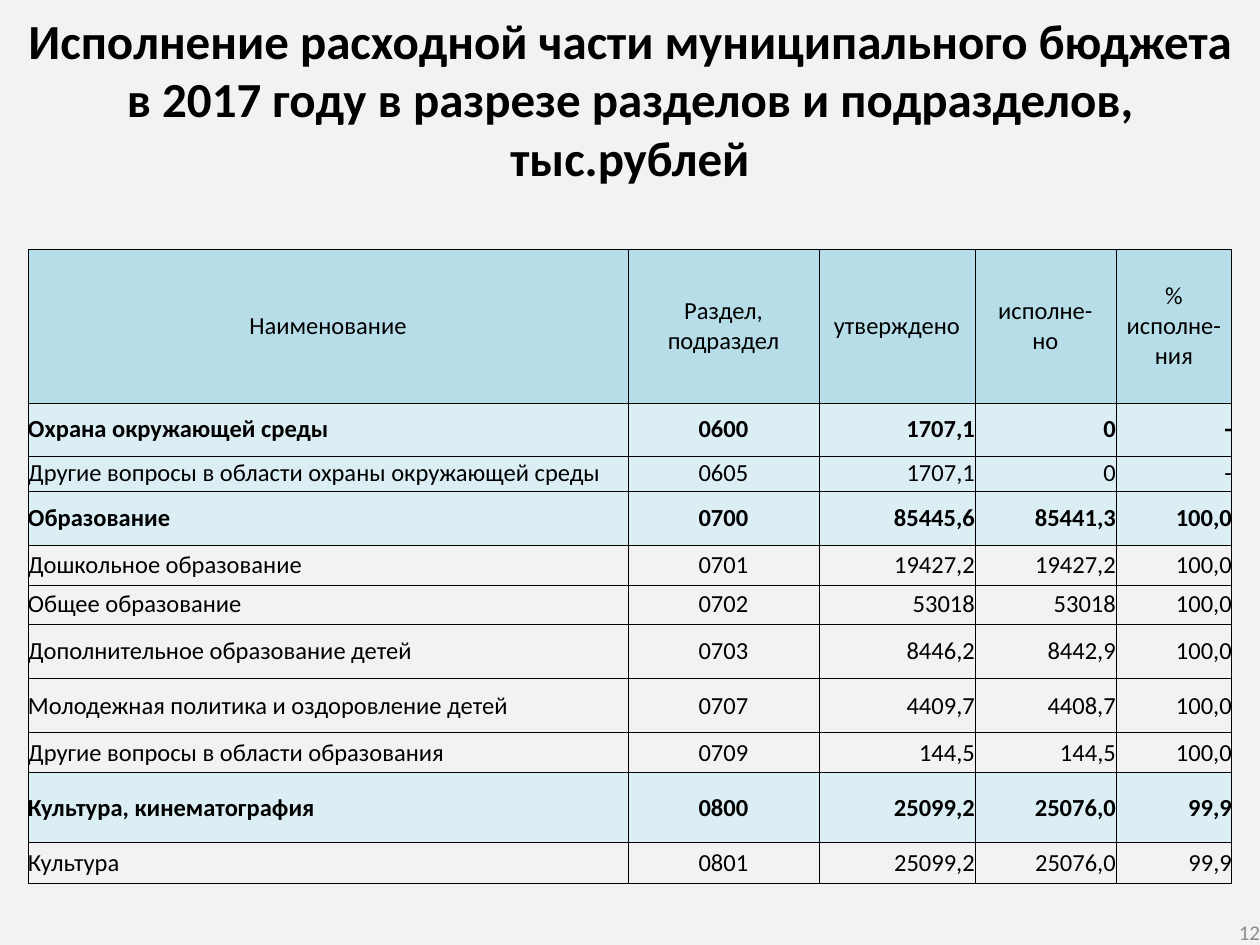
from pptx import Presentation
from pptx.dml.color import RGBColor
from pptx.enum.text import MSO_ANCHOR, PP_ALIGN
from pptx.oxml import parse_xml
from pptx.oxml.ns import nsdecls
from pptx.util import Pt

TITLE = ("Исполнение расходной части муниципального бюджета "
         "в 2017 году в разрезе разделов и подразделов, тыс.рублей")
HEAD = ("Наименование", "Раздел, подраздел", "утверждено", "исполне-\nно", "% исполне-ния")
ROWS = [
    ("Охрана окружающей среды", "0600", "1707,1", "0", "-"),
    ("Другие вопросы в области охраны окружающей среды", "0605", "1707,1", "0", "-"),
    ("Образование", "0700", "85445,6", "85441,3", "100,0"),
    ("Дошкольное образование", "0701", "19427,2", "19427,2", "100,0"),
    ("Общее образование", "0702", "53018", "53018", "100,0"),
    ("Дополнительное образование детей", "0703", "8446,2", "8442,9", "100,0"),
    ("Молодежная политика и оздоровление детей", "0707", "4409,7", "4408,7", "100,0"),
    ("Другие вопросы в области образования", "0709", "144,5", "144,5", "100,0"),
    ("Культура, кинематография", "0800", "25099,2", "25076,0", "99,9"),
    ("Культура", "0801", "25099,2", "25076,0", "99,9"),
]
WIDTHS = (600, 191, 156, 141, 116)
HEIGHTS = (154, 53, 35, 54, 40, 39, 55, 54, 40, 70, 41)
LEFT, CENTER, RIGHT = PP_ALIGN.LEFT, PP_ALIGN.CENTER, PP_ALIGN.RIGHT
ALIGNS = (LEFT, CENTER, RIGHT, RIGHT, RIGHT)
TINTED = {"0605"}


def px(n):
    return round(n * 914400 / 126)


def color(code):
    return RGBColor.from_string(code)


def write(frame, text, size=14, bold=False, ink="000000", align=LEFT):
    frame.word_wrap = True
    line = frame.paragraphs[0]
    line.text = text
    line.alignment = align
    for run in line.runs:
        font = run.font
        font.name, font.size, font.bold = "Calibri", Pt(size), bold
        font.color.rgb = color(ink)


def add_box(slide, area, insets, anchor, text, **style):
    frame = slide.shapes.add_textbox(*map(px, area)).text_frame
    (frame.margin_left, frame.margin_top,
     frame.margin_right, frame.margin_bottom) = map(px, insets)
    frame.vertical_anchor = anchor
    write(frame, text, **style)


def add_edges(cell):
    props = cell._tc.get_or_add_tcPr()
    for side in "LRTB":
        props.append(parse_xml(
            f'<a:ln{side} {nsdecls("a")} w="{Pt(0.5)}"><a:solidFill>'
            f'<a:srgbClr val="000000"/></a:solidFill></a:ln{side}>'))


def fill_cell(cell, text, fill, **style):
    cell.margin_left = cell.margin_right = cell.margin_top = cell.margin_bottom = 0
    cell.vertical_anchor = MSO_ANCHOR.MIDDLE
    add_edges(cell)
    if fill:
        cell.fill.solid()
        cell.fill.fore_color.rgb = color(fill)
    else:
        cell.fill.background()
    write(cell.text_frame, text, **style)


def add_budget(slide):
    area = (28, 249, sum(WIDTHS), sum(HEIGHTS))
    table = slide.shapes.add_table(len(HEIGHTS), len(WIDTHS), *map(px, area)).table
    table.first_row = table.horz_banding = False
    for col, width in zip(table.columns, WIDTHS):
        col.width = px(width)
    for row, height in zip(table.rows, HEIGHTS):
        row.height = px(height)
    for c, text in enumerate(HEAD):
        fill_cell(table.cell(0, c), text, "B7DEE8", align=CENTER)
    for r, row in enumerate(ROWS, 1):
        code = row[1]
        bold = code.endswith("00")
        fill = "DBEEF4" if bold or code in TINTED else None
        for c, text in enumerate(row):
            fill_cell(table.cell(r, c), text, fill, bold=bold, align=ALIGNS[c])


def main():
    deck = Presentation()
    deck.slide_width, deck.slide_height = px(1260), px(945)
    slide = deck.slides.add_slide(deck.slide_layouts[6])
    back = slide.background.fill
    back.solid()
    back.fore_color.rgb = color("F2F2F2")
    add_box(slide, (0, 0, 1260, 194), (13, 10, 13, 6), MSO_ANCHOR.TOP,
            TITLE, size=28, bold=True, align=CENTER)
    add_budget(slide)
    add_box(slide, (966, 919, 294, 26), (0, 0, 0, 0), MSO_ANCHOR.MIDDLE,
            "12", size=12, ink="8C8C8C", align=RIGHT)
    deck.save("out.pptx")


if __name__ == "__main__":
    main()
